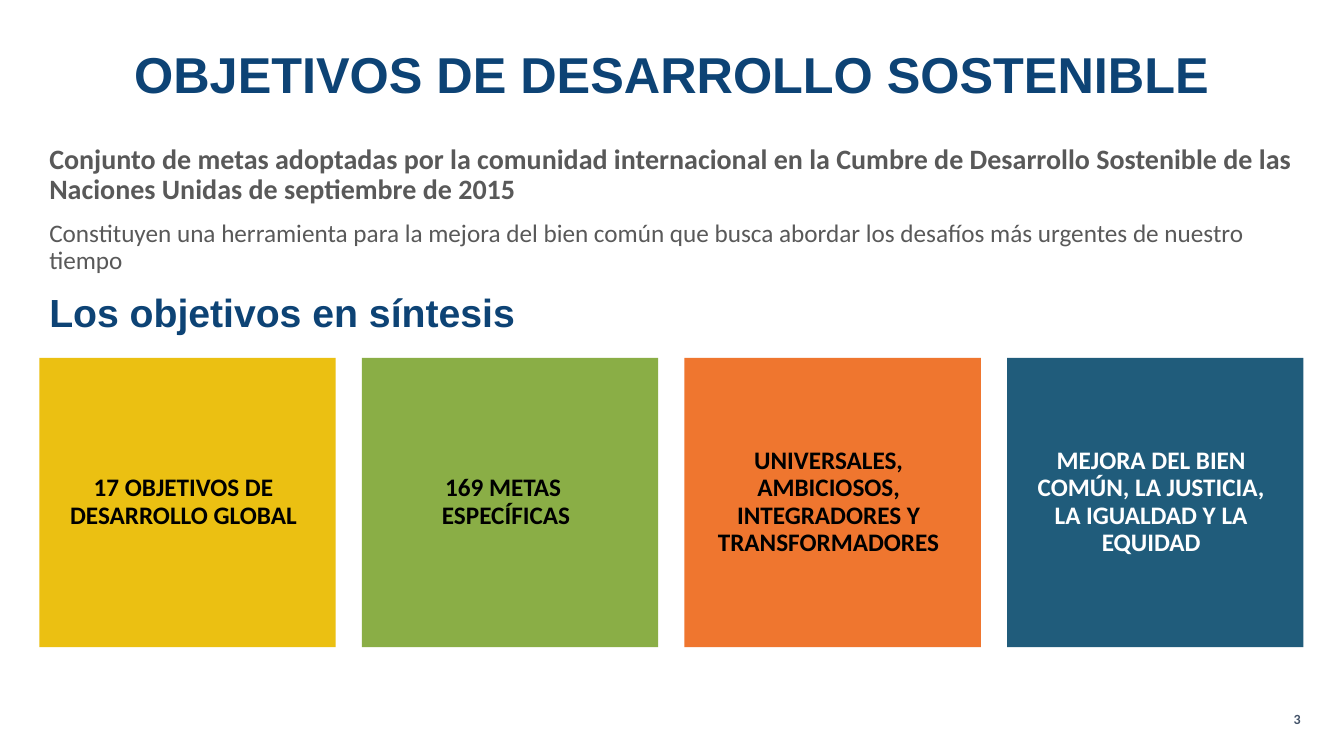
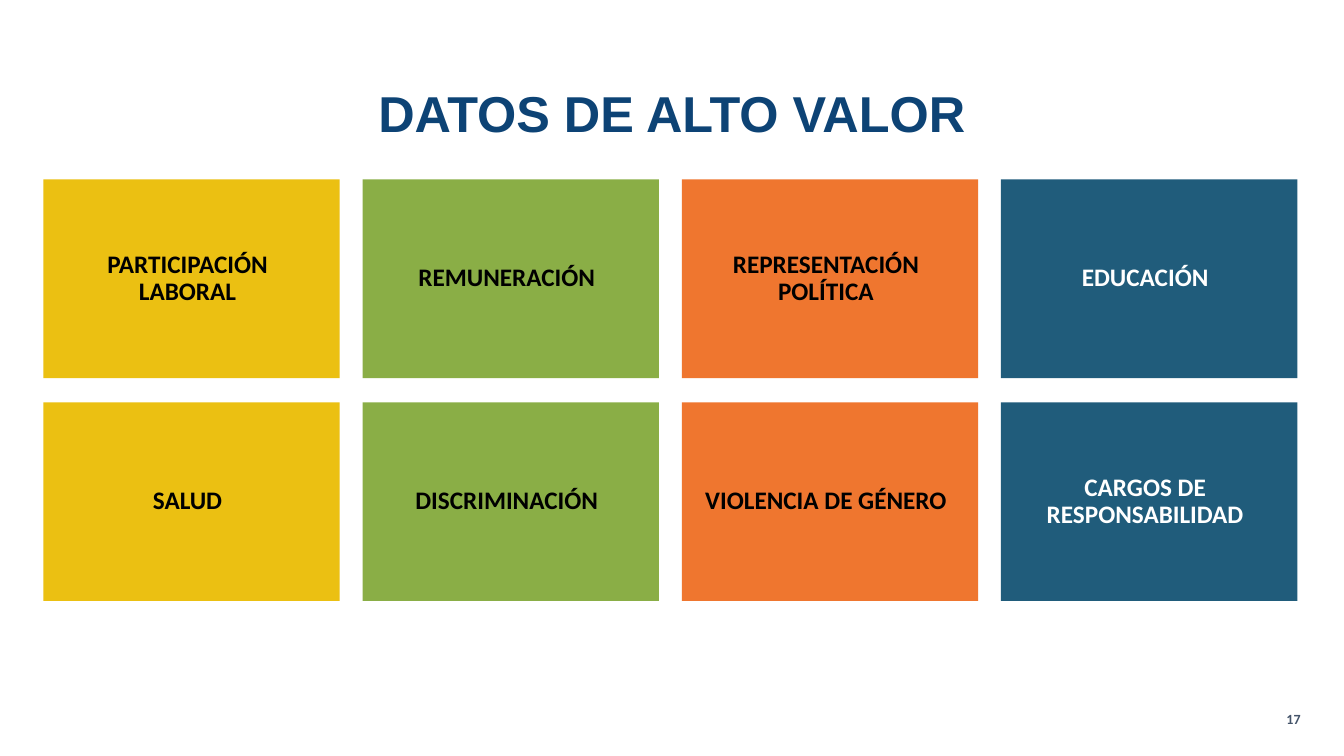
from pptx import Presentation
from pptx.dml.color import RGBColor
from pptx.enum.shapes import MSO_SHAPE
from pptx.enum.text import MSO_ANCHOR, PP_ALIGN
from pptx.util import Inches, Pt

RECT = MSO_SHAPE.RECTANGLE
TOP, MIDDLE = MSO_ANCHOR.TOP, MSO_ANCHOR.MIDDLE
LEFT, CENTER, RIGHT = PP_ALIGN.LEFT, PP_ALIGN.CENTER, PP_ALIGN.RIGHT

COLORS = {
    "navy": "0D4375", "gray": "595959", "slate": "44546A",
    "black": "000000", "white": "FFFFFF",
    "yellow": "EBC012", "green": "8AAE46", "orange": "EF762F", "blue": "205C7B",
}
# Fill and text colour of each card column
COLUMNS = [("yellow", "black"), ("green", "black"),
           ("orange", "black"), ("blue", "white")]
HEAD, BODY = "Arial", "Calibri"
MARGIN = 2.93
CARD_WIDTH = 22.05


def color(name):
    return RGBColor.from_string(COLORS[name])


class Deck:
    """Style and current slide; all lengths are percentages of the slide."""

    def __init__(self):
        self.prs = Presentation()
        self.prs.slide_width = Inches(13.33)
        self.prs.slide_height = Inches(7.5)
        self.slide = None

    def area(self, left, top, width, height):
        wide, high = self.prs.slide_width, self.prs.slide_height
        return [round(share * full / 100) for share, full in
                ((left, wide), (top, high), (width, wide), (height, high))]

    def label(self, frame, text, size, tint, font=BODY, bold=True,
              align=LEFT, anchor=TOP, before=10, line=0.9):
        """Fill a text frame with one styled paragraph."""
        frame.word_wrap = True
        frame.vertical_anchor = anchor
        par = frame.paragraphs[0]
        par.text = text
        par.alignment = align
        par.line_spacing = line
        par.space_before = Pt(before)
        par.font.name, par.font.size, par.font.bold = font, Pt(size), bold
        par.font.color.rgb = color(tint)

    def text(self, area, text, size, tint, **style):
        box = self.slide.shapes.add_textbox(*self.area(*area))
        self.label(box.text_frame, text, size, tint, **style)

    def start(self, title, top, number):
        """Add a slide with its title and page number."""
        self.slide = self.prs.slides.add_slide(self.prs.slide_layouts[6])
        self.text((0, top, 100, 9.6), title, 36, "navy",
                  font=HEAD, align=CENTER, before=0)
        self.text((93.83, 93.33, 3.68, 3.6), str(number), 10, "slate",
                  align=RIGHT, before=0, line=1)

    def card(self, area, text, fill, tint):
        box = self.slide.shapes.add_shape(RECT, *self.area(*area))
        box.shadow.inherit = False
        box.fill.solid()
        box.fill.fore_color.rgb = color(fill)
        box.line.fill.background()
        frame = box.text_frame
        frame.margin_left = Inches(0.16)
        frame.margin_top = frame.margin_right = frame.margin_bottom = Inches(0.24)
        self.label(frame, text, 18, tint, align=CENTER, anchor=MIDDLE)

    def cards(self, rows, left, top, height, col_step, row_step=0):
        """Lay out rows of cards, coloured by column."""
        for row, texts in enumerate(rows):
            for col, (text, pair) in enumerate(zip(texts, COLUMNS)):
                spot = (left + col * col_step, top + row * row_step,
                        CARD_WIDTH, height)
                self.card(spot, text, *pair)


def main():
    deck = Deck()

    deck.start("OBJETIVOS DE DESARROLLO SOSTENIBLE", 6, 3)
    deck.text((MARGIN, 18.53, 94.15, 9.6),
              "Conjunto de metas adoptadas por la comunidad internacional en la "
              "Cumbre de Desarrollo Sostenible de las Naciones Unidas de "
              "septiembre de 2015", 20, "gray")
    deck.text((MARGIN, 28.53, 94.15, 6.53),
              "Constituyen una herramienta para la mejora del bien común que "
              "busca abordar los desafíos más urgentes de nuestro tiempo",
              18, "gray", bold=False)
    deck.text((MARGIN, 38.13, 97.07, 6.27), "Los objetivos en síntesis",
              28, "navy", font=HEAD)
    deck.cards([["17 OBJETIVOS DE DESARROLLO GLOBAL",
                 "169 METAS \nESPECÍFICAS",
                 "UNIVERSALES, AMBICIOSOS, INTEGRADORES Y TRANSFORMADORES",
                 "MEJORA DEL BIEN COMÚN, LA JUSTICIA, LA IGUALDAD Y LA EQUIDAD"]],
               MARGIN, 47.33, 38.27, 24)

    deck.start("DATOS DE ALTO VALOR", 11.07, 17)
    deck.cards([["PARTICIPACIÓN LABORAL", "REMUNERACIÓN",
                 "REPRESENTACIÓN POLÍTICA", "EDUCACIÓN"],
                ["SALUD", "DISCRIMINACIÓN",
                 "VIOLENCIA DE GÉNERO", "CARGOS DE RESPONSABILIDAD"]],
               3.23, 23.75, 26.27, 23.75, 29.47)

    deck.prs.save("out.pptx")


if __name__ == "__main__":
    main()
